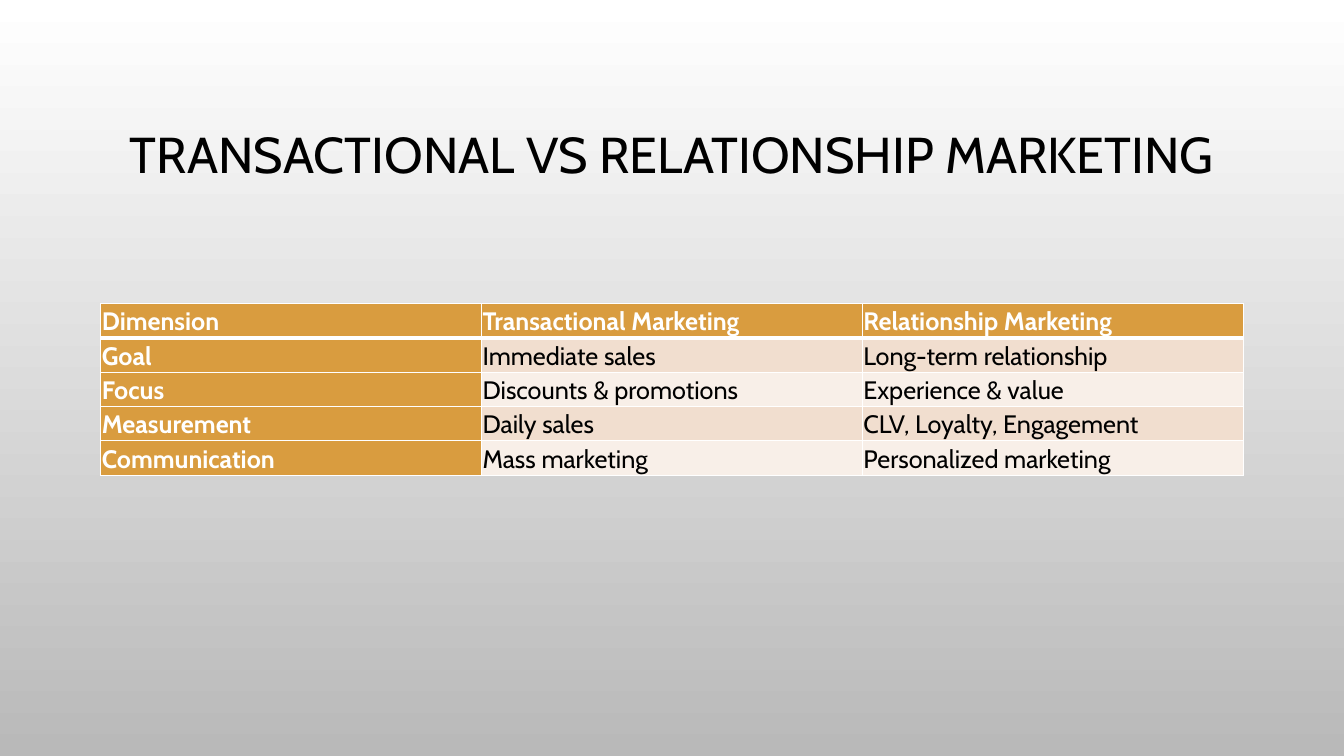
from lxml.etree import SubElement
from pptx import Presentation
from pptx.dml.color import RGBColor
from pptx.enum.text import MSO_ANCHOR, PP_ALIGN
from pptx.oxml.ns import qn
from pptx.util import Inches, Pt

WHITE = RGBColor(0xFF, 0xFF, 0xFF)
BLACK = RGBColor(0, 0, 0)
GREY = RGBColor(0xB9, 0xB9, 0xB9)
GOLD = RGBColor(0xD9, 0x9C, 0x3F)
BANDS = [RGBColor(0xF8, 0xEF, 0xE8), RGBColor(0xF1, 0xDE, 0xCF)]
FONT = "Cabin"

ROWS = [
    ("Dimension", "Transactional Marketing", "Relationship Marketing"),
    ("Goal", "Immediate sales", "Long-term relationship"),
    ("Focus", "Discounts & promotions", "Experience & value"),
    ("Measurement", "Daily sales", "CLV, Loyalty, Engagement"),
    ("Communication", "Mass marketing", "Personalized marketing"),
]


def style(par, size, color, bold=False):
    font = par.font
    font.name, font.size, font.bold = FONT, Pt(size), bold
    font.color.rgb = color


def edge(cell, side, width):
    """Draw a white border on one side (L, R, T or B) of a cell."""
    line = SubElement(cell._tc.get_or_add_tcPr(), qn(f"a:ln{side}"), w=str(Pt(width)))
    fill = SubElement(line, qn("a:solidFill"))
    SubElement(fill, qn("a:srgbClr"), val=str(WHITE))


deck = Presentation()
deck.slide_width, deck.slide_height = Inches(13.33), Inches(7.5)
slide = deck.slides.add_slide(deck.slide_layouts[6])

back = slide.background.fill
back.gradient()
back.gradient_angle = 270
for stop, color, place in zip(back.gradient_stops, (WHITE, GREY), (0, 1)):
    stop.color.rgb = color
    stop.position = place

left, width = Inches(1), Inches(11.33)
title = slide.shapes.add_textbox(left, Inches(0.68), width, Inches(1.75)).text_frame
title.word_wrap = True
title.vertical_anchor = MSO_ANCHOR.MIDDLE
head = title.paragraphs[0]
head.text = "TRANSACTIONAL VS RELATIONSHIP MARKETING"
head.alignment = PP_ALIGN.CENTER
head.line_spacing = 0.9
style(head, 36, BLACK)

table = slide.shapes.add_table(
    len(ROWS), len(ROWS[0]), left, Inches(3.01), width, Inches(1.64)
).table
for r, row in enumerate(ROWS):
    for c, text in enumerate(row):
        cell = table.cell(r, c)
        label = r == 0 or c == 0
        for side in "LRTB":
            thick = (r, side) in ((0, "B"), (1, "T"))
            edge(cell, side, 3 if thick else 1)
        cell.fill.solid()
        cell.fill.fore_color.rgb = GOLD if label else BANDS[r % 2]
        cell.vertical_anchor = MSO_ANCHOR.MIDDLE
        cell.margin_left = cell.margin_right = Inches(0.01)
        cell.margin_top = cell.margin_bottom = Inches(0.01)
        par = cell.text_frame.paragraphs[0]
        par.text = text
        par.line_spacing = 1.07
        par.space_after = Pt(8)
        style(par, 18, WHITE if label else BLACK, label)

deck.save("out.pptx")
